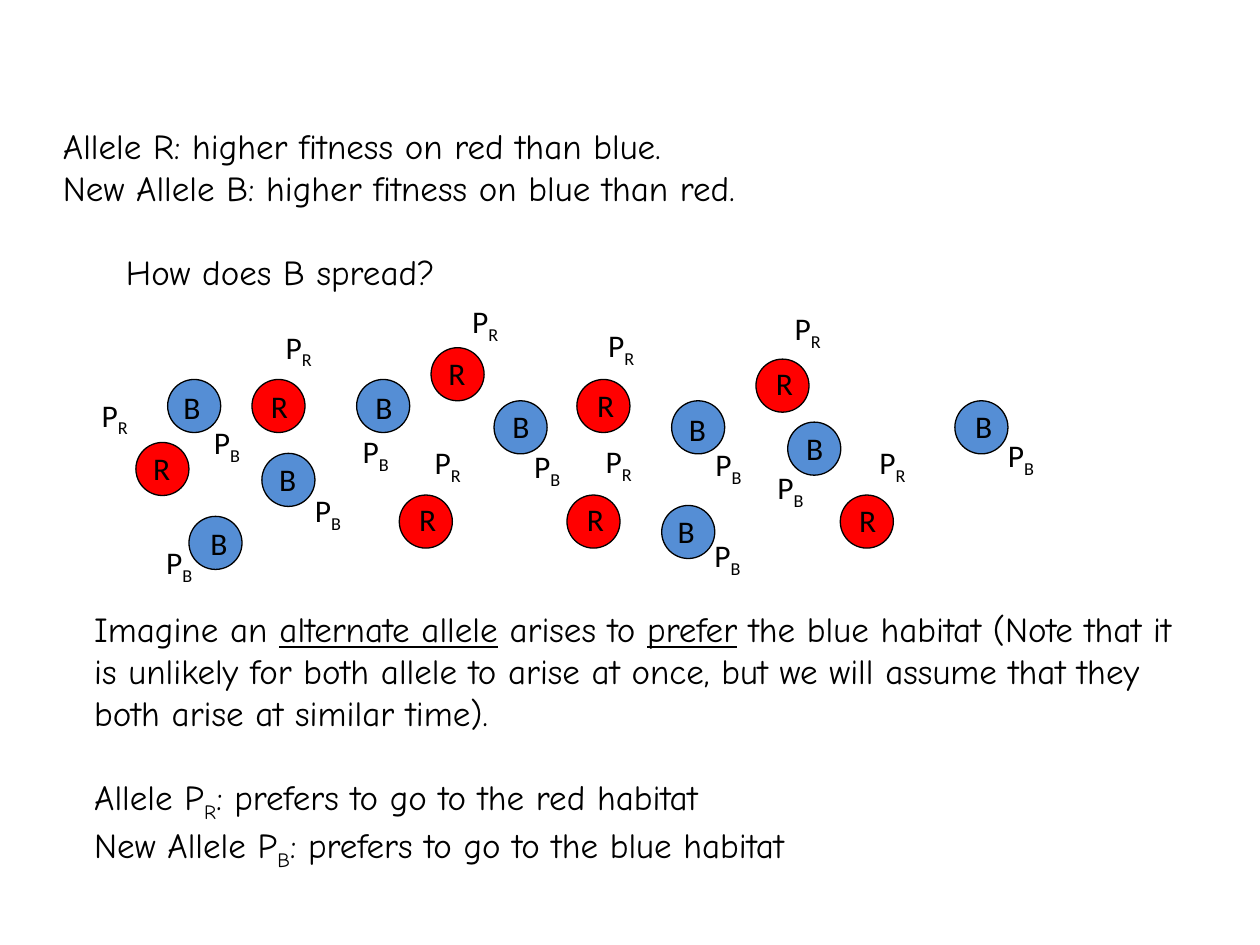
from dataclasses import dataclass

from pptx import Presentation
from pptx.dml.color import RGBColor
from pptx.enum.shapes import MSO_SHAPE as Shape
from pptx.enum.text import MSO_ANCHOR as Anchor, MSO_AUTO_SIZE as AutoSize
from pptx.util import Cm, Pt


@dataclass(frozen=True)
class Theme:
    ink: RGBColor = RGBColor(0x00, 0x00, 0x00)
    red: RGBColor = RGBColor(0xFF, 0x00, 0x00)
    blue: RGBColor = RGBColor(0x55, 0x8E, 0xD5)
    body_font: str = "Comic Neue"
    label_font: str = "Calibri"
    body_size: Pt = Pt(20)
    label_size: Pt = Pt(18)
    outline: Pt = Pt(0.75)
    blank_line: Pt = Pt(24)


THEME = Theme()
CIRCLE_SIZE = 1.07
LETTER_SIZE = (0.86, 1.02)
PREFERENCE_SIZE = (1.07, 1.02)

# Each individual in cm: circle, habitat allele letter, preference allele label
BLUE_INDIVIDUALS = [
    ((3.38, 7.65), (3.45, 7.70), (4.06, 8.41)),
    ((5.28, 9.14), (5.38, 9.14), (6.10, 9.78)),
    ((7.19, 7.65), (7.32, 7.70), (7.06, 8.59)),
    ((3.81, 10.41), (3.99, 10.44), (3.10, 10.82)),
    ((15.88, 8.51), (16.00, 8.53), (15.42, 9.32)),
    ((13.54, 8.08), (13.64, 8.15), (14.17, 8.84)),
    ((19.25, 8.08), (19.41, 8.08), (20.07, 8.66)),
    ((13.34, 10.19), (13.41, 10.19), (14.15, 10.69)),
    ((9.96, 8.08), (10.08, 8.08), (10.52, 8.89)),
]
RED_INDIVIDUALS = [
    ((5.08, 7.65), (5.21, 7.67), (5.51, 6.48)),
    ((2.74, 8.92), (2.84, 8.92), (1.80, 7.85)),
    ((8.05, 9.98), (8.20, 9.96), (8.51, 8.81)),
    ((8.69, 7.01), (8.79, 7.01), (9.27, 5.97)),
    ((11.63, 7.65), (11.79, 7.65), (12.01, 6.45)),
    ((11.43, 9.98), (11.58, 9.96), (11.96, 8.79)),
    ((15.24, 7.24), (15.39, 7.21), (15.77, 6.10)),
    ((16.94, 9.98), (17.07, 9.98), (17.48, 8.81)),
]


def add_box(slide, place, size, wrap=True):
    box = slide.shapes.add_textbox(*map(Cm, place + size))
    box.text_frame.word_wrap = wrap
    box.text_frame.auto_size = AutoSize.SHAPE_TO_FIT_TEXT
    return box.text_frame


def add_span(para, text, font, size, underline=None, subscript=False):
    span = para.add_run()
    span.text = text
    span.font.name = font
    span.font.size = size
    span.font.color.rgb = THEME.ink
    span.font.underline = underline
    if subscript:
        span.font._element.set("baseline", "-25000")


def add_body(frame, paragraphs):
    """Fill a frame from (spans, blank line before) pairs; a span is text and options."""
    for index, (spans, gap) in enumerate(paragraphs):
        para = frame.add_paragraph() if index else frame.paragraphs[0]
        if gap:
            para.space_before = THEME.blank_line
        for text, options in spans:
            add_span(para, text, THEME.body_font, THEME.body_size, **options)


def set_hanging(para, level, left):
    para.level = level
    properties = para._p.get_or_add_pPr()
    properties.set("marL", str(Cm(left)))
    properties.set("indent", str(-Cm(0.95)))


def add_circle(slide, place, colour):
    circle = slide.shapes.add_shape(
        Shape.OVAL, *map(Cm, place), Cm(CIRCLE_SIZE), Cm(CIRCLE_SIZE))
    circle.shadow.inherit = False
    circle.fill.solid()
    circle.fill.fore_color.rgb = colour
    circle.line.color.rgb = THEME.ink
    circle.line.width = THEME.outline


def add_label(slide, place, size, text, subscript=""):
    para = add_box(slide, place, size, wrap=False).paragraphs[0]
    add_span(para, text, THEME.label_font, THEME.label_size)
    if subscript:
        add_span(para, subscript, THEME.label_font, THEME.label_size, subscript=True)


def add_population(slide, individuals, allele, colour):
    for circle, letter, preference in individuals:
        add_circle(slide, circle, colour)
        add_label(slide, letter, LETTER_SIZE, allele)
        add_label(slide, preference, PREFERENCE_SIZE, "P", allele)


def add_fitness_text(slide):
    frame = add_box(slide, (1.02, 1.52), (23.95, 4.5))
    frame.vertical_anchor = Anchor.BOTTOM
    frame.auto_size = AutoSize.NONE
    add_body(frame, [
        ([("Allele R: higher fitness on red than blue.", {})], False),
        ([("New Allele B: higher fitness on blue than red.", {})], False),
        ([("How does B spread?", {})], True),
    ])
    for para, level in zip(frame.paragraphs, (0, 0, 1)):
        set_hanging(para, level, 0.95 + 1.27 * level)


def add_preference_text(slide):
    underlined, lowered = {"underline": True}, {"subscript": True}
    add_body(add_box(slide, (1.65, 12.12), (22.48, 5.33)), [
        ([("Imagine an ", {}), ("alternate allele", underlined),
          (" arises to ", {}), ("prefer", underlined),
          (" the blue habitat (Note that it is unlikely for both allele to arise "
           "at once, but we will assume that they both arise at similar time).", {})],
         False),
        ([("Allele P", {}), ("R", lowered),
          (": prefers to go to the red habitat", {})], True),
        ([("New Allele P", {}), ("B", lowered),
          (": prefers to go to the blue habitat", {})], False),
    ])


def main():
    deck = Presentation()
    deck.slide_width, deck.slide_height = Cm(25.4), Cm(19.05)
    slide = deck.slides.add_slide(deck.slide_layouts[6])
    add_fitness_text(slide)
    add_preference_text(slide)
    add_population(slide, BLUE_INDIVIDUALS, "B", THEME.blue)
    add_population(slide, RED_INDIVIDUALS, "R", THEME.red)
    deck.save("out.pptx")


if __name__ == "__main__":
    main()
